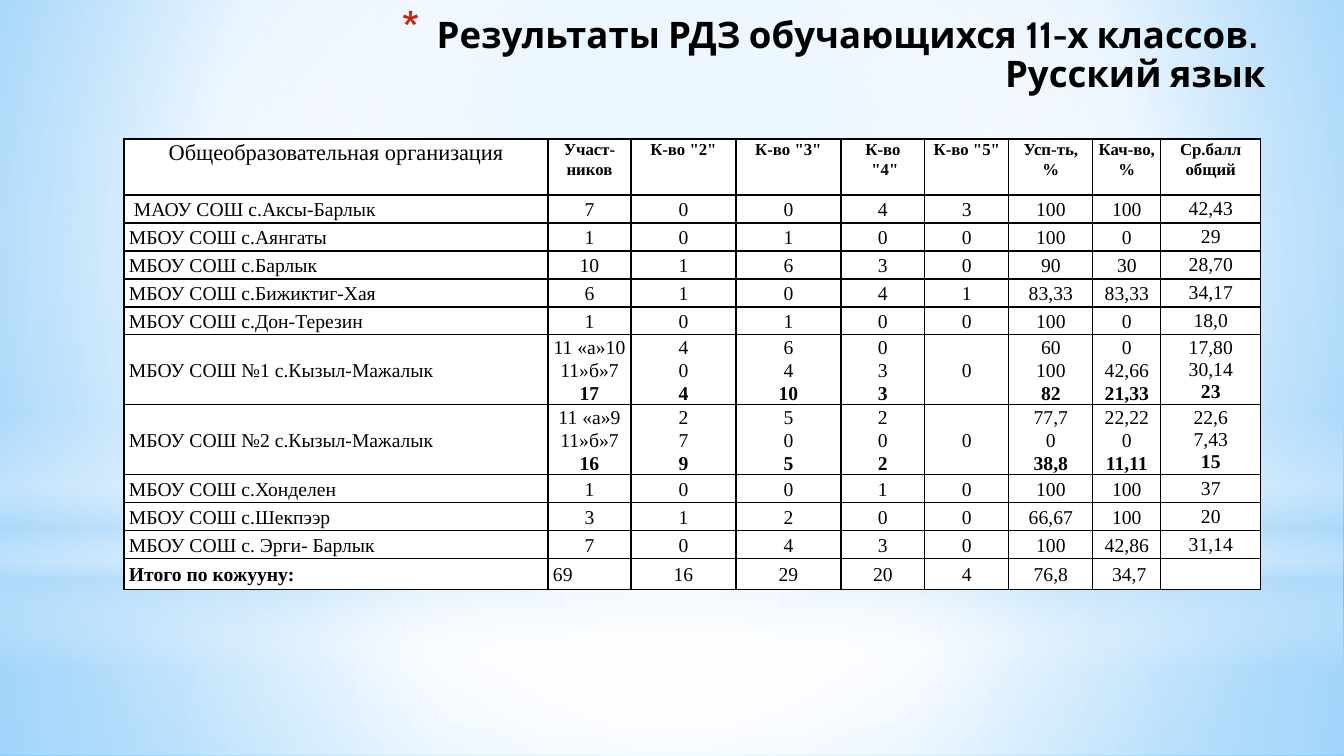
import pptx
import pptx.util
import pptx.dml.color
import pptx.enum.shapes
import pptx.enum.text
import pptx.oxml
import pptx.oxml.ns
import lxml.etree

RGB = pptx.dml.color.RGBColor
BLACK = RGB(0x00, 0x00, 0x00)
WHITE = RGB(0xFF, 0xFF, 0xFF)
RED = RGB(0xC3, 0x26, 0x0C)
PALE_BLUE = RGB(0xB4, 0xDC, 0xFA)
SKY = RGB(0x9E, 0xD5, 0xFF)
DEEP_SKY = RGB(0x5B, 0xB9, 0xFF)

TITLE = "Результаты РДЗ обучающихся 11-х классов. \nРусский язык"

# A tuple holds the paragraphs of one cell.
HEADER = ["Общеобразовательная организация", "Участ-\nников", 'К-во "2"', 'К-во "3"',
          ("К-во", ' "4"'), 'К-во "5"', "Усп-ть,\n%", "Кач-во,\n%", "Ср.балл\nобщий"]
SCHOOLS = [
    [" МАОУ СОШ с.Аксы-Барлык", "7", "0", "0", "4", "3", "100", "100", "42,43"],
    ["МБОУ СОШ с.Аянгаты", "1", "0", "1", "0", "0", "100", "0", "29"],
    ["МБОУ СОШ с.Барлык", "10", "1", "6", "3", "0", "90", "30", "28,70"],
    ["МБОУ СОШ с.Бижиктиг-Хая", "6", "1", "0", "4", "1", "83,33", "83,33", "34,17"],
    ["МБОУ СОШ с.Дон-Терезин", "1", "0", "1", "0", "0", "100", "0", "18,0"],
    ["МБОУ СОШ №1 с.Кызыл-Мажалык", ("11 «а»10", "11»б»7", "17"), ("4", "0", "4"),
     ("6", "4", "10"), ("0", "3", "3"), "0", ("60", "100", "82"),
     ("0", "42,66", "21,33"), ("17,80", "30,14", "23")],
    ["МБОУ СОШ №2 с.Кызыл-Мажалык", ("11 «а»9", "11»б»7", "16"), ("2", "7", "9"),
     ("5", "0", "5"), ("2", "0", "2"), "0", ("77,7", "0", "38,8"),
     ("22,22", "0", "11,11"), ("22,6", "7,43", "15")],
    ["МБОУ СОШ с.Хонделен", "1", "0", "0", "1", "0", "100", "100", "37"],
    ["МБОУ СОШ с.Шекпээр", "3", "1", "2", "0", "0", "66,67", "100", "20"],
    ["МБОУ СОШ с. Эрги- Барлык", "7", "0", "4", "3", "0", "100", "42,86", "31,14"],
]
TOTAL = ["Итого по кожууну:", "69", "16", "29", "20", "4", "76,8", " 34,7", ""]
ROWS = [HEADER, *SCHOOLS, TOTAL]

COLUMN_WIDTHS = [424, 83, 105, 105, 84, 84, 84, 68, 100]
HEADER_HEIGHT, ROW_HEIGHT, SPLIT_ROW_HEIGHT, TOTAL_HEIGHT = 56, 28, 70, 31

# Gradient stops: position %, colour, opacity %. Focus: left, top, right, bottom %.
SKY_STOPS = [(0, SKY, 100), (60, WHITE, 100), (100, DEEP_SKY, 100)]
SKY_FOCUS = (20, 10, 20, 60)
CENTRE = (50, 50, 50, 50)
RECTANGLE = pptx.enum.shapes.MSO_SHAPE.RECTANGLE
OVAL = pptx.enum.shapes.MSO_SHAPE.OVAL
GLOWS = [
    (RECTANGLE, (0, 562, 1344, 194), CENTRE,
     [(0, WHITE, 91), (37, WHITE, 76), (100, PALE_BLUE, 79)]),
    (RECTANGLE, (0, 0, 1344, 562), CENTRE,
     [(0, WHITE, 89), (48, WHITE, 62), (100, PALE_BLUE, 79)]),
    (RECTANGLE, (0, 415, 1344, 252), None,
     [(0, WHITE, 0), (29, WHITE, 30), (45, PALE_BLUE, 40),
      (55, WHITE, 26), (65, PALE_BLUE, 60), (100, WHITE, 0)]),
    (OVAL, (0, 176, 1344, 562), CENTRE, [(0, WHITE, 100), (56, WHITE, 0)]),
]

EMU_PER_PX = 914400 / 100.8
qn = pptx.oxml.ns.qn
Pt = pptx.util.Pt
ALIGN = pptx.enum.text.PP_ALIGN
ANCHOR = pptx.enum.text.MSO_ANCHOR


def px(length):
    return pptx.util.Emu(round(length * EMU_PER_PX))


def add_child(parent, tag, **attributes):
    child = lxml.etree.SubElement(parent, qn(tag))
    for name, value in attributes.items():
        child.set(name, str(value))
    return child


def set_gradient(fill, owner, stops, focus):
    """Fill with stops around a focus, or from top to bottom when focus is None."""
    fill.gradient()
    gradient = owner.find(".//" + qn("a:gradFill"))
    for child in list(gradient):
        gradient.remove(child)
    stop_list = add_child(gradient, "a:gsLst")
    for position, color, opacity in stops:
        stop = add_child(stop_list, "a:gs", pos=position * 1000)
        shade = add_child(stop, "a:srgbClr", val=color)
        if opacity < 100:
            add_child(shade, "a:alpha", val=opacity * 1000)
    if focus is None:
        add_child(gradient, "a:lin", ang=5400000, scaled=0)
    else:
        path_node = add_child(gradient, "a:path", path="circle")
        add_child(path_node, "a:fillToRect",
                  **{side: share * 1000 for side, share in zip("ltrb", focus)})


def add_glow(slide, kind, box, focus, stops):
    glow = slide.shapes.add_shape(kind, *map(px, box))
    glow.shadow.inherit = False
    glow.line.fill.background()
    set_gradient(glow.fill, glow._element, stops, focus)


def set_font(paragraph, name, size, bold):
    font = paragraph.font
    font.name, font.size, font.bold = name, Pt(size), bold
    font.color.rgb = BLACK


def format_title(title):
    title.left, title.top, title.width, title.height = map(px, (179, 13, 1097, 88))
    frame = title.text_frame
    frame.word_wrap = True
    frame.auto_size = pptx.enum.text.MSO_AUTO_SIZE.NONE
    frame.vertical_anchor = ANCHOR.TOP
    heading = frame.paragraphs[0]
    heading.text = TITLE.replace("\n", "\v")
    heading.alignment = ALIGN.RIGHT
    heading.line_spacing = 0.88
    properties = heading._p.get_or_add_pPr()
    properties.set("marL", str(px(35)))
    properties.set("indent", str(px(-35)))
    add_child(add_child(properties, "a:buClr"), "a:srgbClr", val=RED)
    add_child(properties, "a:buSzPct", val=128000)
    add_child(properties, "a:buChar", char="*")
    set_font(heading, "Cabin", 26.1, True)


def add_borders(cell):
    properties = cell._tc.get_or_add_tcPr()
    for side in ("a:lnL", "a:lnR", "a:lnT", "a:lnB"):
        border = add_child(properties, side, w=Pt(1))
        add_child(add_child(border, "a:solidFill"), "a:srgbClr", val=BLACK)


def fill_cell(cell, content, row, column):
    is_header, is_total = row == 0, row == len(ROWS) - 1
    is_name, is_score = column == 0, column == len(HEADER) - 1
    add_borders(cell)
    cell.fill.solid()
    cell.fill.fore_color.rgb = WHITE
    cell.margin_left = cell.margin_right = px(5)
    cell.margin_top = cell.margin_bottom = 0
    cell.vertical_anchor = ANCHOR.TOP if is_header else ANCHOR.MIDDLE

    lines = content if isinstance(content, tuple) else (content,)
    for index, line in enumerate(lines):
        paragraph = cell.text_frame.paragraphs[0] if index == 0 else cell.text_frame.add_paragraph()
        paragraph.text = line.replace("\n", "\v")
        left_aligned = (is_name and not is_header) or (is_total and column == 1)
        paragraph.alignment = ALIGN.LEFT if left_aligned else ALIGN.CENTER
        paragraph.line_spacing = 1.0 if is_score and not is_header else 1.07
        if is_header:
            size, bold = (16, False) if is_name else (12, True)
        else:
            size, bold = 14, (is_total and is_name) or index == 2
        set_font(paragraph, "Times New Roman", size, bold)


def add_results(slide):
    heights = [SPLIT_ROW_HEIGHT if isinstance(row[1], tuple) else ROW_HEIGHT for row in ROWS]
    heights[0], heights[-1] = HEADER_HEIGHT, TOTAL_HEIGHT
    results = slide.shapes.add_table(len(ROWS), len(HEADER), px(124), px(139),
                                     px(sum(COLUMN_WIDTHS)), px(sum(heights))).table
    results.first_row = results.horz_banding = False
    for column, width in zip(results.columns, COLUMN_WIDTHS):
        column.width = px(width)
    for row, height in zip(results.rows, heights):
        row.height = px(height)
    for r, row in enumerate(ROWS):
        for c, content in enumerate(row):
            fill_cell(results.cell(r, c), content, r, c)


def main():
    deck = pptx.Presentation()
    deck.slide_width, deck.slide_height = px(1344), px(756)
    slide = deck.slides.add_slide(deck.slide_layouts[5])
    set_gradient(slide.background.fill, slide._element, SKY_STOPS, SKY_FOCUS)
    for kind, box, focus, stops in GLOWS:
        add_glow(slide, kind, box, focus, stops)
    title = slide.shapes.title
    slide.shapes._spTree.append(title._element)
    format_title(title)
    add_results(slide)
    deck.save("out.pptx")


if __name__ == "__main__":
    main()
